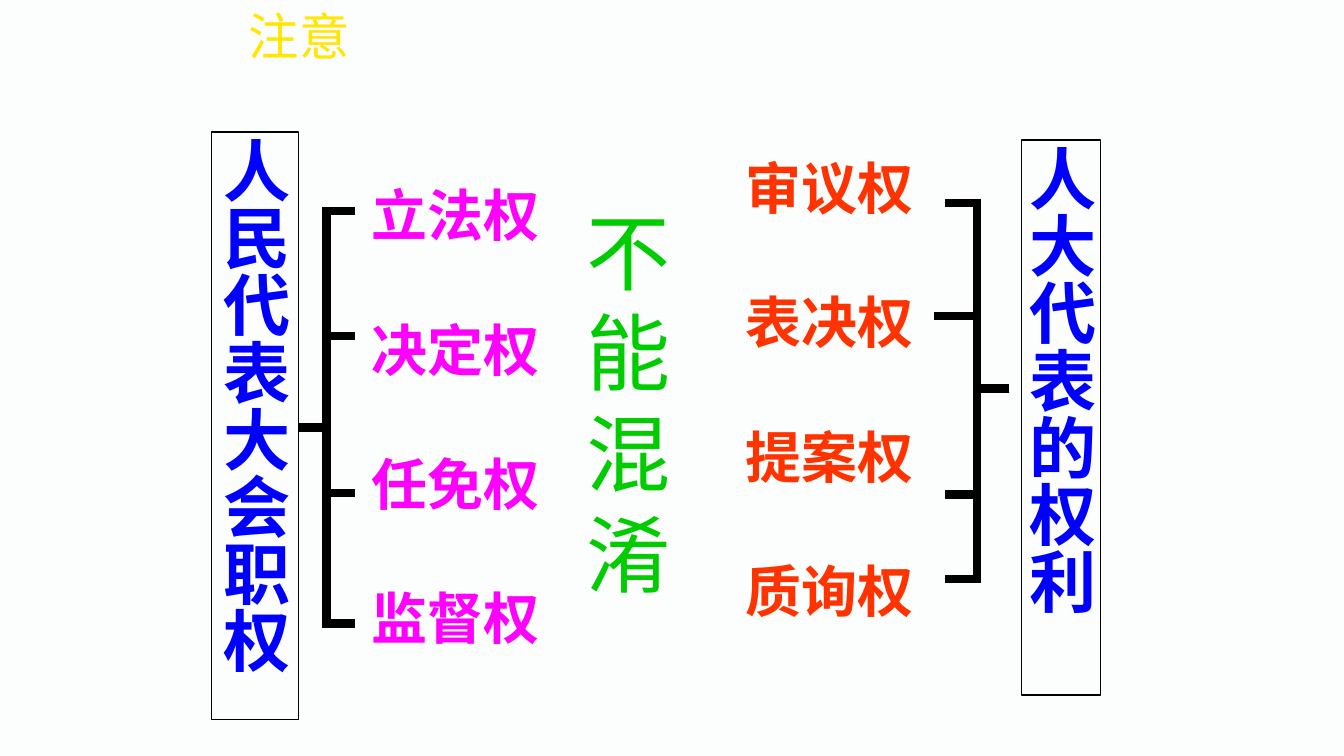
from lxml.etree import SubElement
from pptx import Presentation
from pptx.dml.color import RGBColor
from pptx.enum.shapes import MSO_CONNECTOR, MSO_SHAPE
from pptx.enum.text import MSO_ANCHOR, PP_ALIGN
from pptx.oxml.ns import qn
from pptx.util import Inches, Pt

# Lengths are counted in grid cells: 100 columns by 56.25 rows.
CELL = Inches(0.1)
COLUMNS, ROWS = 100, 56.25

BACKGROUND = RGBColor(0xFC, 0xFD, 0xFD)
BLACK = RGBColor(0x00, 0x00, 0x00)
BLUE = RGBColor(0x00, 0x00, 0xFF)
MAGENTA = RGBColor(0xFF, 0x00, 0xFF)
ORANGE = RGBColor(0xFF, 0x33, 0x00)
GREEN = RGBColor(0x00, 0xCC, 0x00)
YELLOW = RGBColor(0xFF, 0xE7, 0x01)

CONGRESS_POWERS = ["立法权", "决定权", "任免权", "监督权"]
DEPUTY_RIGHTS = ["审议权", "表决权", "提案权", "质询权"]


def cells(*counts):
    return [round(count * CELL) for count in counts]


def set_margins(text_frame):
    text_frame.margin_left = text_frame.margin_right = Inches(0.07)
    text_frame.margin_top = text_frame.margin_bottom = Inches(0.04)


def format_runs(paragraph, font_name, size, color, bold):
    for run in paragraph.runs:
        font = run.font
        font.name, font.size, font.bold = font_name, Pt(size), bold
        font.color.rgb = color
        properties = run._r.get_or_add_rPr()
        SubElement(properties, qn("a:ea")).set("typeface", font_name)


def add_text(slide, place, lines, size, color, font_name="Arial", bold=False,
             wrap=True, alignment=PP_ALIGN.LEFT, gap=0):
    text_frame = slide.shapes.add_textbox(*cells(*place)).text_frame
    set_margins(text_frame)
    text_frame.word_wrap = wrap
    text_frame.text = "\n".join(lines)
    for index, paragraph in enumerate(text_frame.paragraphs):
        paragraph.alignment = alignment
        paragraph.line_spacing = Pt(size * 1.2)
        paragraph.space_before = Pt(gap if index else 0)
        format_runs(paragraph, font_name, size, color, bold)


def add_vertical_title(slide, place, text):
    """Add an outlined box whose text runs from top to bottom."""
    shape = slide.shapes.add_shape(MSO_SHAPE.FLOWCHART_PROCESS, *cells(*place))
    shape.shadow.inherit = False
    shape.fill.background()
    shape.line.color.rgb = BLACK
    shape.line.width = Pt(0.75)
    text_frame = shape.text_frame
    set_margins(text_frame)
    text_frame.word_wrap = False
    text_frame.vertical_anchor = MSO_ANCHOR.MIDDLE
    text_frame._txBody.bodyPr.set("vert", "eaVert")
    text_frame.text = text
    paragraph = text_frame.paragraphs[0]
    paragraph.alignment = PP_ALIGN.CENTER
    format_runs(paragraph, "DejaVu Sans", 36, BLUE, True)


def add_bracket(slide, root, trunk, tips):
    """Join the root point to each tip by an elbow that turns at the trunk column."""
    for tip in tips:
        connector = slide.shapes.add_connector(MSO_CONNECTOR.ELBOW, *cells(*root, *tip))
        connector.line.color.rgb = BLACK
        connector.line.width = Pt(4.5)
        properties = connector._element.spPr
        SubElement(properties.find(qn("a:ln")), qn("a:miter")).set("lim", "800000")
        SubElement(properties, qn("a:effectLst"))
        turn = round(100000 * (trunk - root[0]) / (tip[0] - root[0]))
        guide = SubElement(properties.find(qn("a:prstGeom")).find(qn("a:avLst")), qn("a:gd"))
        guide.set("name", "adj1")
        guide.set("fmla", f"val {turn}")


def main():
    presentation = Presentation()
    presentation.slide_width, presentation.slide_height = cells(COLUMNS, ROWS)
    slide = presentation.slides.add_slide(presentation.slide_layouts[6])
    slide.background.fill.solid()
    slide.background.fill.fore_color.rgb = BACKGROUND

    add_vertical_title(slide, (15.73, 9.82, 6.5, 43.7), "人民代表大会职权")
    add_bracket(slide, (22.2, 31.8), 24.3,
                [(26.4, row) for row in (15.7, 25, 36.7, 46.4)])
    add_text(slide, (26.94, 13.04, 18.8, 36.1), CONGRESS_POWERS, 30, MAGENTA,
             bold=True, gap=36)

    add_vertical_title(slide, (76, 10.42, 5.9, 41.3), "人大代表的权利")
    add_bracket(slide, (75.1, 28.9), 72.7,
                [(70.3, 43.1), (70.3, 36.8), (69.5, 23.5), (70.3, 15.1)])
    add_text(slide, (54.74, 11, 17.8, 36.1), DEPUTY_RIGHTS, 30, ORANGE, bold=True, gap=36)

    add_text(slide, (42.9, 14.5, 8.8, 30.8), ["不能混淆"], 45, GREEN)
    add_text(slide, (15.7, 0, 13.1, 6.9), ["注意"], 27, YELLOW, "Noto Sans CJK SC",
             wrap=False, alignment=PP_ALIGN.CENTER)
    presentation.save("out.pptx")


if __name__ == "__main__":
    main()
